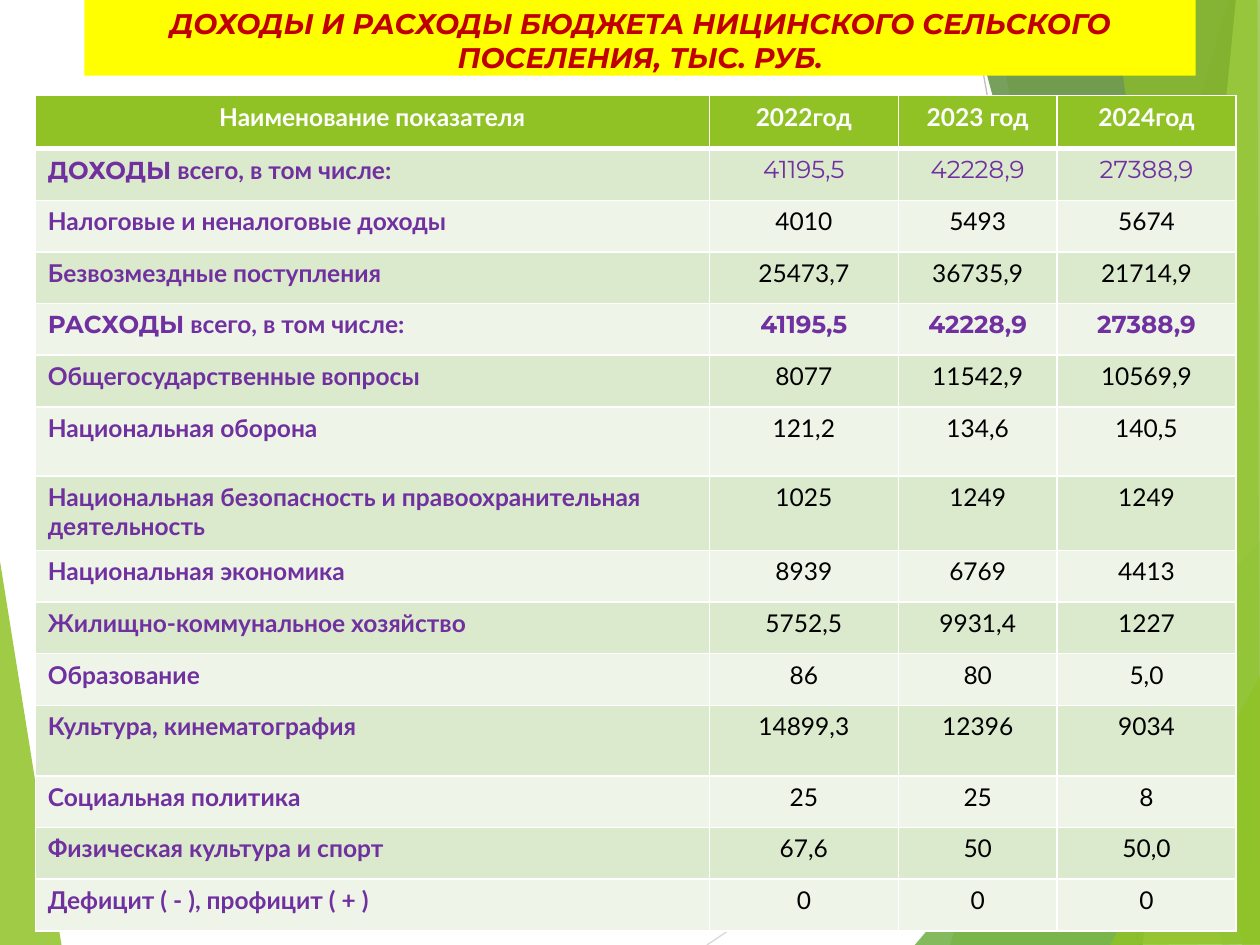
from pptx import Presentation
from pptx.dml.color import RGBColor
from pptx.enum.shapes import MSO_CONNECTOR as Connector
from pptx.enum.text import MSO_ANCHOR as Anchor, MSO_AUTO_SIZE as AutoSize, PP_ALIGN as Align
from pptx.oxml.ns import qn
from pptx.util import Inches, Pt
from lxml.etree import SubElement

FACETS = [
    ("90C226", 85, [(-0.01, 4.39), (0.49, 7.51), (-0.01, 7.5)]),
    ("90C226", 30, [(9.75, 0), (7.54, 7.5), (10.02, 7.51), (10.01, 0.01)]),
    ("90C226", 20, [(7.88, -0.01), (9.19, 7.5), (10.01, 7.5), (10.01, -0.01)]),
    ("54A021", 72, [(7.26, 7.5), (10, 4.29), (10.01, 7.5)]),
    ("3F7819", 70, [(7.67, -0.01), (9.7, 7.5), (10.01, 7.49), (10.01, -0.01)]),
    ("C0E474", 70, [(9.81, -0.01), (9.07, 7.5), (10.01, 7.5), (10, -0.01)]),
    ("90C226", 65, [(8.83, -0.01), (9.86, 7.5), (10, 7.5), (9.98, -0.01)]),
    ("90C226", 80, [(8.81, 7.5), (10.01, 5.35), (10.01, 7.49)]),
]
HEADER = ["Наименование показателя", "2022год", "2023 год", "2024год"]
BUDGET = [
    ["ДОХОДЫ всего, в том числе:", "41195,5", "42228,9", "27388,9"],
    ["Налоговые и неналоговые доходы", "4010", "5493", "5674"],
    ["Безвозмездные поступления", "25473,7", "36735,9", "21714,9"],
    ["РАСХОДЫ всего, в том числе:", "41195,5", "42228,9", "27388,9"],
    ["Общегосударственные вопросы", "8077", "11542,9", "10569,9"],
    ["Национальная оборона", "121,2", "134,6", "140,5"],
    ["Национальная безопасность и правоохранительная деятельность", "1025", "1249", "1249"],
    ["Национальная экономика", "8939", "6769", "4413"],
    ["Жилищно-коммунальное хозяйство", "5752,5", "9931,4", "1227"],
    ["Образование", "86", "80", "5,0"],
    ["Культура, кинематография", "14899,3", "12396", "9034"],
    ["Социальная политика", "25", "25", "8"],
    ["Физическая культура и спорт", "67,6", "50", "50,0"],
    ["Дефицит ( - ), профицит ( + )", "0", "0", "0"],
]
COLUMN_WIDTHS = [5.35, 1.5, 1.26, 1.42]
ROW_HEIGHT = 0.41
SPECIAL_HEIGHTS = {0: 0.42, 6: 0.55, 7: 0.59, 11: 0.56}


def color(code):
    return RGBColor.from_string(code)


class BudgetSlide:
    """Holds the style of the budget slide and draws its elements."""

    body_font, accent_font = "Lato", "Montserrat"
    green, purple, white, black = "90C226", "7030A0", "FFFFFF", "000000"
    bands = ["EEF4E8", "DBE9CD"]

    def __init__(self, page):
        self.page = page

    def facet(self, code, opacity, points):
        corners = [(Inches(x), Inches(y)) for x, y in points]
        builder = self.page.shapes.build_freeform(*corners[0])
        builder.add_line_segments(corners[1:], close=True)
        shape = builder.convert_to_shape()
        shape.shadow.inherit = False
        shape.line.fill.background()
        shape.fill.solid()
        shape.fill.fore_color.rgb = color(code)
        tone = next(shape.element.iter(qn("a:srgbClr")))
        SubElement(tone, qn("a:alpha"), val=str(opacity * 1000))

    def line(self, start, end, code):
        ends = [Inches(value) for value in (*start, *end)]
        connector = self.page.shapes.add_connector(Connector.STRAIGHT, *ends)
        connector.line.color.rgb = color(code)
        connector.line.width = Pt(0.75)
        SubElement(connector.element.spPr, qn("a:effectLst"))

    def style(self, para, size, font, code, bold, italic=False, align=Align.CENTER):
        para.alignment = align
        para.font.size, para.font.bold, para.font.italic = Pt(size), bold, italic
        para.font.color.rgb = color(code)
        if font:
            para.font.name = font

    def title(self, text, left, top, width, height):
        box = self.page.shapes.title
        box.left, box.top, box.width, box.height = map(Inches, (left, top, width, height))
        box.fill.solid()
        box.fill.fore_color.rgb = color("FFFF00")
        frame = box.text_frame
        frame.text = text
        frame.word_wrap, frame.auto_size = True, AutoSize.NONE
        frame.vertical_anchor = Anchor.TOP
        self.style(frame.paragraphs[0], 16.2, self.accent_font, "C00000", True, italic=True)
        box.element.getparent().append(box.element)

    def borders(self, cell, top, bottom):
        properties = cell._tc.get_or_add_tcPr()
        for side, width in zip("LRTB", (1, 1, top, bottom)):
            edge = SubElement(properties, qn(f"a:ln{side}"), w=str(Pt(width)))
            SubElement(SubElement(edge, qn("a:solidFill")), qn("a:srgbClr"), val=self.white)

    def cell(self, cell, text, row, column):
        self.borders(cell, 3 if row == 1 else 1, 3 if row == 0 else 1)
        cell.fill.solid()
        cell.fill.fore_color.rgb = color(self.bands[row % 2] if row else self.green)
        para = cell.text_frame.paragraphs[0]
        total = row in (1, 4)
        if row == 0:
            para.text = text
            self.style(para, 14, self.body_font, self.white, True)
        elif column:
            para.text = text
            font, code = (self.accent_font, self.purple) if total else (self.body_font, self.black)
            self.style(para, 14, font, code, row == 4)
        elif total:
            lead, rest = text.split(" ", 1)
            for part, font in ((lead, self.accent_font), (f" {rest}", self.body_font)):
                span = para.add_run()
                span.text, span.font.name = part, font
            self.style(para, 14, None, self.purple, True, align=Align.LEFT)
        else:
            para.text = text
            self.style(para, 14, self.body_font, self.purple, True, align=Align.LEFT)

    def table(self, rows, left, top):
        heights = [SPECIAL_HEIGHTS.get(row, ROW_HEIGHT) for row in range(len(rows))]
        size = Inches(sum(COLUMN_WIDTHS)), Inches(sum(heights))
        frame = self.page.shapes.add_table(
            len(rows), len(COLUMN_WIDTHS), Inches(left), Inches(top), *size
        )
        table = frame.table
        for column, width in zip(table.columns, COLUMN_WIDTHS):
            column.width = Inches(width)
        for row, texts in enumerate(rows):
            table.rows[row].height = Inches(heights[row])
            for column, text in enumerate(texts):
                self.cell(table.cell(row, column), text, row, column)


def main():
    deck = Presentation()
    deck.slide_width, deck.slide_height = Inches(10), Inches(7.5)
    slide = BudgetSlide(deck.slides.add_slide(deck.slide_layouts[5]))
    slide.facet(*FACETS[0])
    slide.line((5.61, 7.5), (10.01, 4.57), "D9D9D9")
    slide.line((7.7, 0), (9.04, 7.5), "BFBFBF")
    for facet in FACETS[1:]:
        slide.facet(*facet)
    slide.title(
        "ДОХОДЫ И РАСХОДЫ БЮДЖЕТА НИЦИНСКОГО СЕЛЬСКОГО ПОСЕЛЕНИЯ, ТЫС. РУБ.",
        0.67, 0, 8.82, 0.6,
    )
    slide.table([HEADER, *BUDGET], 0.28, 0.76)
    deck.save("out.pptx")


if __name__ == "__main__":
    main()
